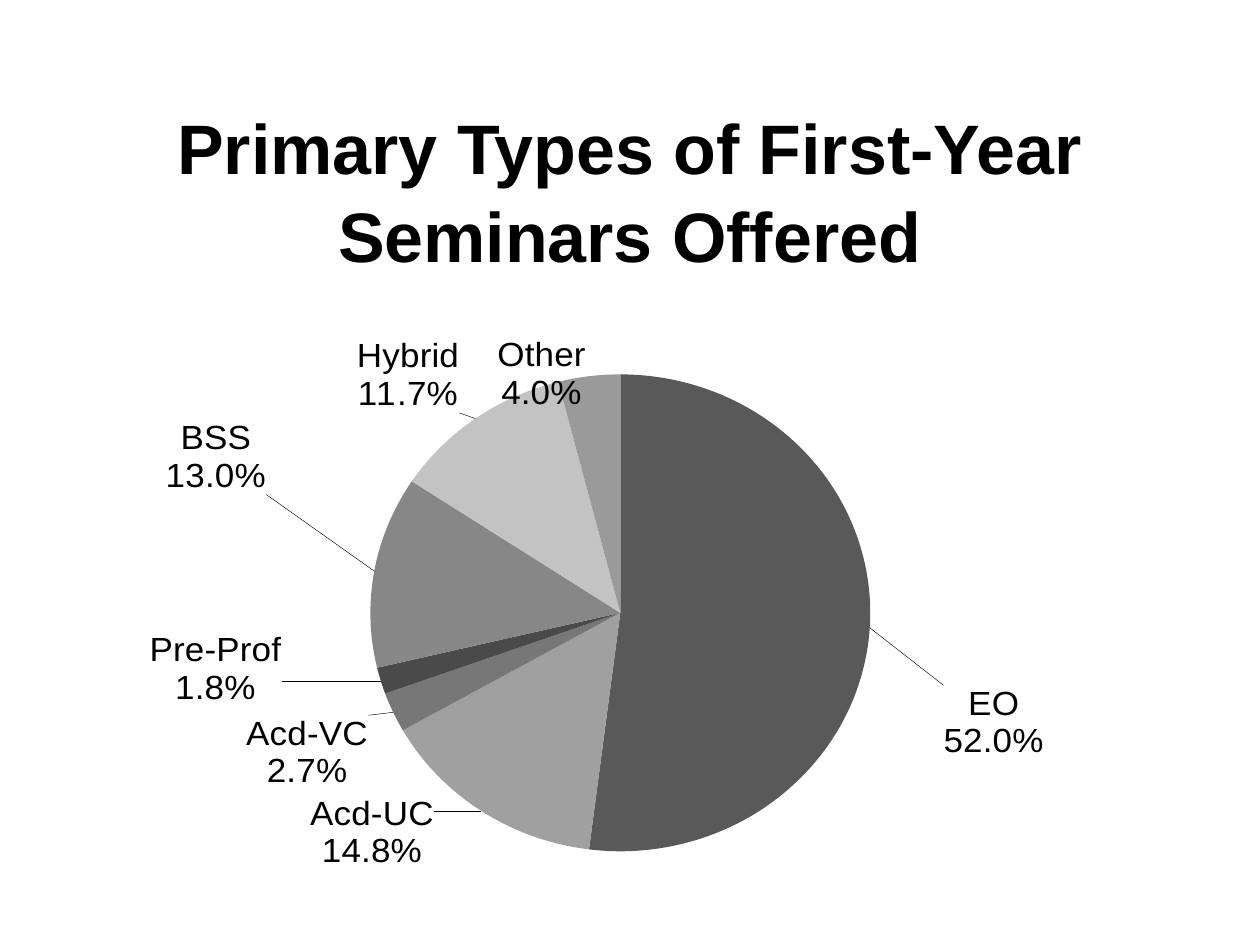
from pptx import Presentation
from pptx.chart.data import CategoryChartData
from pptx.dml.color import RGBColor
from pptx.enum.chart import XL_CHART_TYPE
from pptx.enum.text import MSO_ANCHOR, PP_ALIGN
from pptx.oxml import parse_xml
from pptx.oxml.ns import nsdecls
from pptx.util import Emu, Pt

PX = 914400 // 126
FONT = "Arial"
BLACK = "000000"

# category, percent, fill, label offset from its usual place (px)
SEMINARS = [
    ("EO", 52.0, "595959", (66, 99)),
    ("Acd-UC", 14.8, "A0A0A0", (-43, -23)),
    ("Acd-VC", 2.7, "777777", (-18, 0)),
    ("Pre-Prof", 1.8, "4A4A4A", (-92, -54)),
    ("BSS", 13.0, "878787", (-101, -79)),
    ("Hybrid", 11.7, "C3C3C3", (-12, 0)),
    ("Other", 4.0, "9A9A9A", (-2, 45)),
]

LABEL_SHOWS = """
<c:numFmt formatCode="0.0%" sourceLinked="0"/>
<c:dLblPos val="outEnd"/>
<c:showLegendKey val="0"/><c:showVal val="0"/><c:showCatName val="1"/>
<c:showSerName val="0"/><c:showPercent val="1"/><c:showBubbleSize val="0"/>
<c:separator>\n</c:separator>"""


def color(hex_string):
    return RGBColor.from_string(hex_string)


def px(*lengths):
    return [Emu(length * PX) for length in lengths]


def style_font(font, size, bold):
    font.name = FONT
    font.size = Pt(size)
    font.bold = bold
    font.color.rgb = color(BLACK)


def add_title(slide, box, text):
    title = slide.shapes.title
    title.left, title.top, title.width, title.height = px(*box)
    frame = title.text_frame
    frame.word_wrap = True
    frame.vertical_anchor = MSO_ANCHOR.TOP
    paragraph = frame.paragraphs[0]
    paragraph.alignment = PP_ALIGN.CENTER
    paragraph.line_spacing = 1.05
    run = paragraph.add_run()
    run.text = text
    style_font(run.font, 40, True)


def manual_layout(x, y, size=None, target=""):
    extent = ""
    if size:
        extent = f'<c:w val="{size[0]:.3f}"/><c:h val="{size[1]:.3f}"/>'
    modes = '<c:xMode val="edge"/><c:yMode val="edge"/>' if size else ""
    return (f'<c:layout {nsdecls("c")}><c:manualLayout>{target}{modes}'
            f'<c:x val="{x:.3f}"/><c:y val="{y:.3f}"/>{extent}'
            f'</c:manualLayout></c:layout>')


def place_pie(chart, width, height, left, top, diameter):
    plot_area = chart.plots[0]._element.getparent()
    for layout in plot_area.findall("{*}layout"):
        plot_area.remove(layout)
    plot_area.insert(0, parse_xml(manual_layout(
        left / width, top / height, (diameter / width, diameter / height),
        '<c:layoutTarget val="inner"/>')))


def add_labels(series, width, height):
    """Label each slice with its name and share, joined by leader lines."""
    labels = "".join(
        f'<c:dLbl><c:idx val="{index}"/>'
        f'{manual_layout(dx / width, dy / height)}{LABEL_SHOWS}</c:dLbl>'
        for index, (_, _, _, (dx, dy)) in enumerate(SEMINARS))
    leader_lines = (
        '<c:showLeaderLines val="1"/><c:leaderLines><c:spPr><a:ln w="3175">'
        f'<a:solidFill><a:srgbClr val="{BLACK}"/></a:solidFill></a:ln>'
        '</c:spPr></c:leaderLines>')
    series._element.find("{*}cat").addprevious(parse_xml(
        f'<c:dLbls {nsdecls("c", "a")}>{labels}{LABEL_SHOWS}'
        f'{leader_lines}</c:dLbls>'))


def add_seminar_pie(slide, box):
    width, height = box[2:]
    data = CategoryChartData()
    data.categories = [name for name, *_ in SEMINARS]
    data.add_series("Series 1", [share for _, share, *_ in SEMINARS])
    chart = slide.shapes.add_chart(XL_CHART_TYPE.PIE, *px(*box), data).chart
    chart.has_legend = False
    chart.has_title = False
    style_font(chart.font, 20, False)
    plot = chart.plots[0]
    plot.vary_by_categories = True
    series = plot.series[0]
    for index, (_, _, fill_color, _) in enumerate(SEMINARS):
        slice_format = series.points[index].format
        slice_format.fill.solid()
        slice_format.fill.fore_color.rgb = color(fill_color)
        slice_format.line.fill.background()
    place_pie(chart, width, height, 276, 69, 500)
    add_labels(series, width, height)


def main():
    presentation = Presentation()
    presentation.slide_width, presentation.slide_height = px(1260, 945)
    slide = presentation.slides.add_slide(presentation.slide_layouts[5])
    add_title(slide, (94, 94, 1071, 158),
              "Primary Types of First-Year Seminars Offered")
    add_seminar_pie(slide, (94, 294, 1071, 598))
    presentation.save("out.pptx")


if __name__ == "__main__":
    main()
